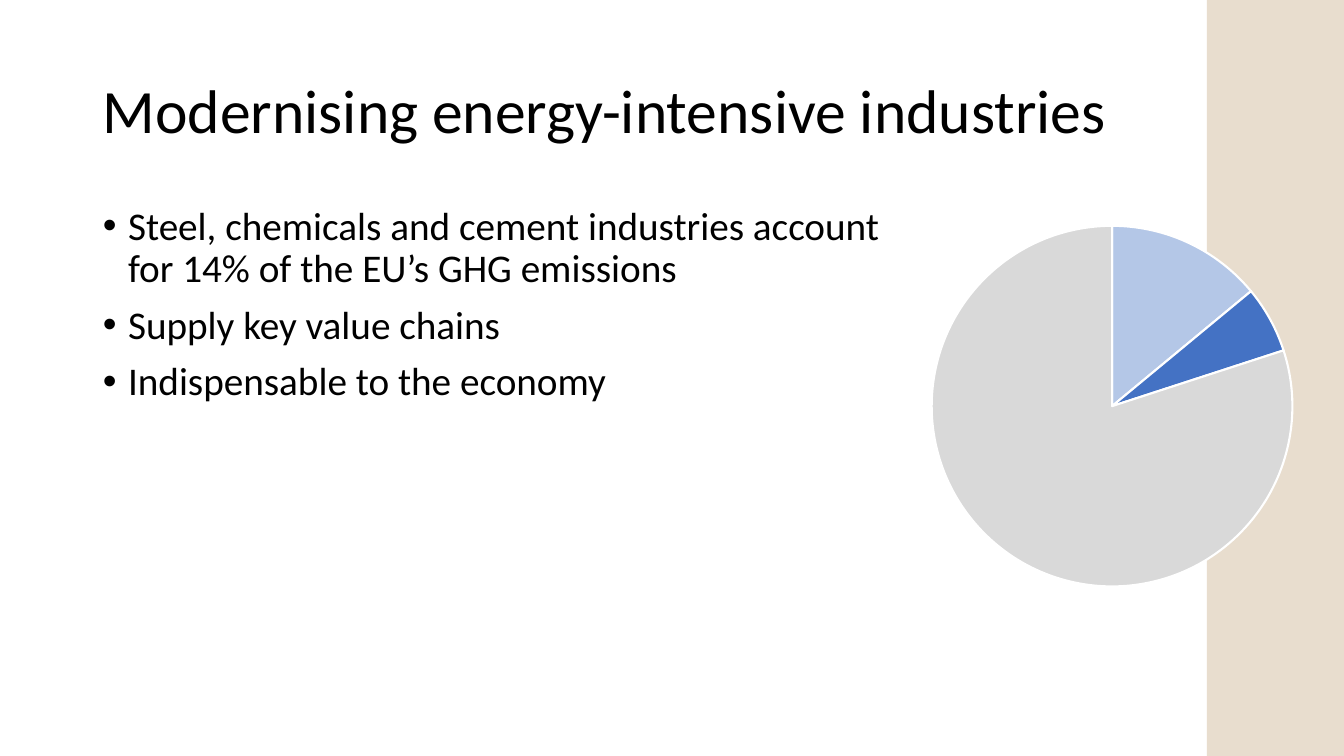
from lxml.etree import SubElement
from pptx import Presentation
from pptx.chart.data import CategoryChartData
from pptx.dml.color import RGBColor
from pptx.enum.chart import XL_CHART_TYPE
from pptx.enum.shapes import MSO_SHAPE
from pptx.enum.text import MSO_ANCHOR, MSO_AUTO_SIZE, PP_ALIGN
from pptx.oxml import parse_xml
from pptx.oxml.ns import nsdecls, qn
from pptx.util import Inches, Pt

BLACK = RGBColor(0x00, 0x00, 0x00)
WHITE = RGBColor(0xFF, 0xFF, 0xFF)
SAND = RGBColor(0xE8, 0xDD, 0xCE)
LIGHT_BLUE = RGBColor(0xB4, 0xC7, 0xE7)
BLUE = RGBColor(0x44, 0x72, 0xC4)
GREY = RGBColor(0xD9, 0xD9, 0xD9)


def apply(target, values):
    for name, value in values.items():
        setattr(target, name, value)


class SlideBuilder:
    font_name = "Calibri"

    def __init__(self, deck):
        self.page = deck.slides.add_slide(deck.slide_layouts[1])

    def set_font(self, font, size):
        apply(font, {"name": self.font_name, "size": Pt(size)})
        font.color.rgb = BLACK

    def place(self, box, left, top, width, height):
        apply(box, {"left": Inches(left), "top": Inches(top),
                    "width": Inches(width), "height": Inches(height)})

    def title(self, text, area):
        box = self.page.shapes.title
        self.place(box, *area)
        frame = box.text_frame
        frame.text = text
        apply(frame, {"vertical_anchor": MSO_ANCHOR.MIDDLE, "word_wrap": True,
                      "auto_size": MSO_AUTO_SIZE.NONE})
        para = frame.paragraphs[0]
        apply(para, {"alignment": PP_ALIGN.LEFT, "line_spacing": 0.9})
        self.set_font(para.runs[0].font, 44)

    def bullets(self, lines, area):
        box = self.page.placeholders[1]
        self.place(box, *area)
        frame = box.text_frame
        frame.text = "\n".join(lines)
        apply(frame, {"word_wrap": True, "auto_size": MSO_AUTO_SIZE.NONE})
        for index, para in enumerate(frame.paragraphs):
            apply(para, {"line_spacing": 0.9, "space_before": Pt(10 if index else 0)})
            properties = para._p.get_or_add_pPr()
            properties.set("marL", str(Inches(0.25)))
            properties.set("indent", str(-Inches(0.25)))
            SubElement(properties, qn("a:buFont"), typeface="Arial")
            SubElement(properties, qn("a:buChar"), char="•")
            self.set_font(para.runs[0].font, 28)

    def band(self, color, area):
        shape = self.page.shapes.add_shape(MSO_SHAPE.RECTANGLE, *map(Inches, area))
        shape.shadow.inherit = False
        shape.fill.solid()
        shape.fill.fore_color.rgb = color
        shape.line.fill.background()

    def pie(self, name, slices, area):
        data = CategoryChartData()
        data.categories = [str(number) for number in range(1, len(slices) + 1)]
        data.add_series(name, [value for value, _ in slices])
        chart = self.page.shapes.add_chart(
            XL_CHART_TYPE.PIE, *map(Inches, area), data).chart
        apply(chart, {"has_legend": False, "has_title": False})
        self.set_font(chart.font, 10)
        plot = chart.plots[0]
        plot.vary_by_categories = True
        for index, (_, color) in enumerate(slices):
            style = plot.series[0].points[index].format
            style.fill.solid()
            style.fill.fore_color.rgb = color
            style.line.color.rgb = WHITE
            style.line.width = Pt(1.5)
        self.set_plot_size(chart, 0.84, 0.93)

    def set_plot_size(self, chart, width, height):
        plot_area = chart._chartSpace.chart.plotArea
        for layout in plot_area.findall(qn("c:layout")):
            plot_area.remove(layout)
        plot_area.insert(0, parse_xml(
            f'<c:layout {nsdecls("c")}><c:manualLayout>'
            '<c:layoutTarget val="inner"/>'
            '<c:xMode val="edge"/><c:yMode val="edge"/>'
            f'<c:x val="{(1 - width) / 2:.3f}"/><c:y val="{(1 - height) / 2:.3f}"/>'
            f'<c:w val="{width}"/><c:h val="{height}"/>'
            '</c:manualLayout></c:layout>'))


def main():
    deck = Presentation()
    apply(deck, {"slide_width": Inches(13.33), "slide_height": Inches(7.5)})
    builder = SlideBuilder(deck)
    builder.title("Modernising energy-intensive industries", (0.92, 0.4, 11.5, 1.45))
    builder.bullets([
        "Steel, chemicals and cement industries account for 14% of the EU’s GHG emissions",
        "Supply key value chains",
        "Indispensable to the economy",
    ], (0.92, 2, 8.08, 4.76))
    builder.band(SAND, (11.97, 0, 1.36, 7.5))
    builder.pie("Series 1", [(14, LIGHT_BLUE), (6, BLUE), (80, GREY)],
                (8.9, 2.1, 4.26, 3.86))
    deck.save("out.pptx")


if __name__ == "__main__":
    main()
